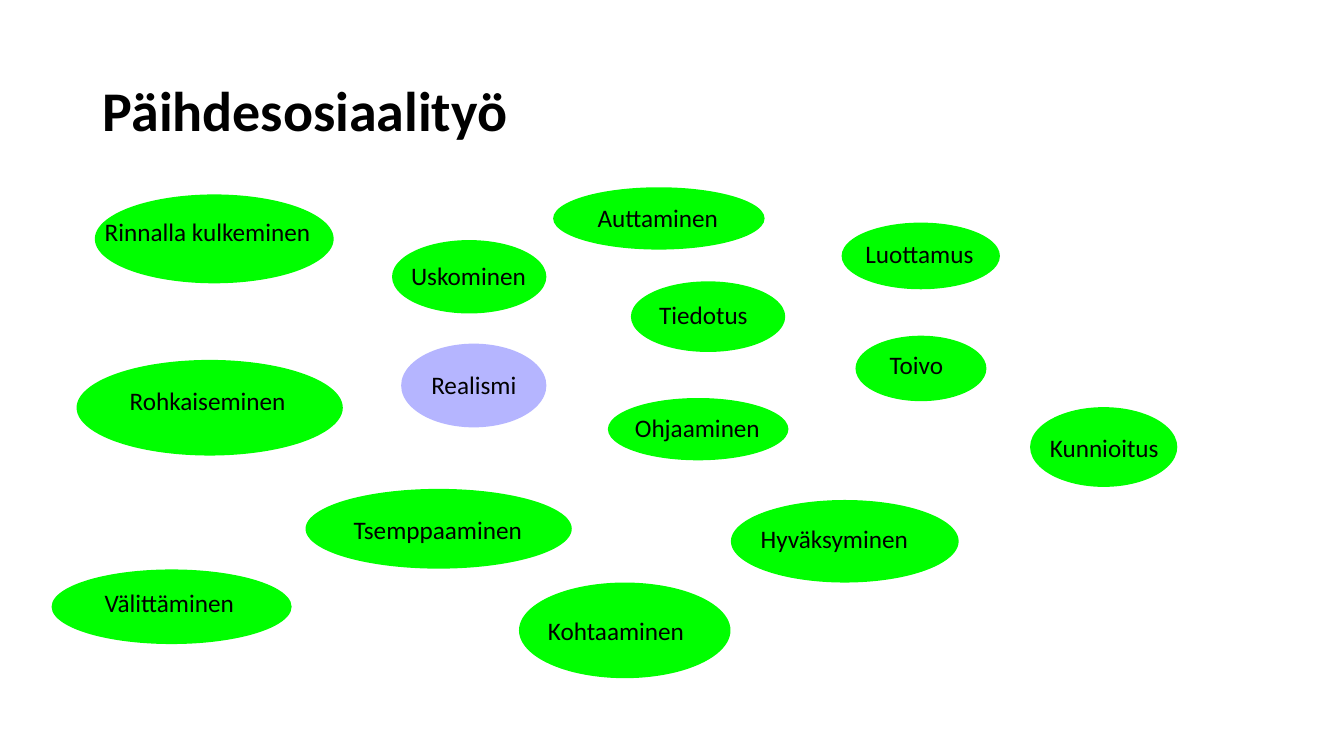
from dataclasses import dataclass

from pptx import Presentation
from pptx.dml.color import RGBColor
from pptx.enum.shapes import MSO_SHAPE
from pptx.enum.text import MSO_ANCHOR
from pptx.util import Cm, Pt


@dataclass(frozen=True)
class Theme:
    font: str = "Calibri"
    title_size: int = 40
    label_size: int = 18
    text: str = "000000"
    green: str = "00FF00"
    lavender: str = "B5B5FF"


THEME = Theme()
LABEL_HEIGHT = 1.02

# Word, ellipse (left, top, width, height), label (left, top, width), all in cm
CONCEPTS = [
    ("Rinnalla kulkeminen", (2.39, 4.9, 6.02, 2.24), (2.39, 5.33, 5.74)),
    ("Auttaminen", (13.94, 4.72, 5.33, 1.57), (14.81, 4.98, 3.61)),
    ("Luottamus", (21.21, 5.61, 3.99, 1.68), (21.56, 5.89, 3.63)),
    ("Uskominen", (9.88, 6.05, 3.89, 1.85), (10.11, 6.43, 3.43)),
    ("Tiedotus", (15.9, 7.09, 3.89, 1.78), (16.36, 7.42, 2.77)),
    ("Toivo", (21.56, 8.46, 3.3, 1.65), (22.17, 8.69, 2.06)),
    ("Realismi", (10.11, 8.66, 3.66, 2.11), (10.62, 9.19, 2.67)),
    ("Rohkaiseminen", (1.93, 9.07, 6.71, 2.41), (3.02, 9.58, 4.47)),
    ("Ohjaaminen", (15.32, 10.03, 4.55, 1.57), (15.75, 10.26, 3.71)),
    ("Kunnioitus", (25.96, 10.26, 3.71, 2.01), (26.21, 10.77, 3.86)),
    ("Tsemppaaminen", (7.7, 12.32, 6.71, 2.01), (8.66, 12.83, 4.8)),
    ("Hyväksyminen", (18.42, 12.6, 5.74, 2.08), (18.92, 13.06, 4.27)),
    ("Välittäminen", (1.3, 14.35, 6.05, 1.88), (2.39, 14.68, 3.81)),
    ("Kohtaaminen", (13.08, 14.68, 5.33, 2.41), (13.56, 15.37, 3.99)),
]


def add_text(slide, text, box, size, bold=False, anchor=MSO_ANCHOR.TOP):
    shape = slide.shapes.add_textbox(*map(Cm, box))
    frame = shape.text_frame
    frame.word_wrap = True
    frame.vertical_anchor = anchor
    paragraph = frame.paragraphs[0]
    paragraph.text = text
    font = paragraph.font
    font.name = THEME.font
    font.size = Pt(size)
    font.bold = bold
    font.color.rgb = RGBColor.from_string(THEME.text)
    return paragraph


def add_ellipse(slide, box, color):
    shape = slide.shapes.add_shape(MSO_SHAPE.OVAL, *map(Cm, box))
    shape.shadow.inherit = False
    shape.fill.solid()
    shape.fill.fore_color.rgb = RGBColor.from_string(color)
    shape.line.fill.background()


def main():
    presentation = Presentation()
    presentation.slide_width = Cm(33.87)
    presentation.slide_height = Cm(19.05)
    slide = presentation.slides.add_slide(presentation.slide_layouts[6])

    # Title
    title = add_text(slide, "Päihdesosiaalityö", (2.34, 1.02, 19.3, 3.68),
                     THEME.title_size, bold=True, anchor=MSO_ANCHOR.MIDDLE)
    title.line_spacing = 0.9

    # Concept bubbles; realism stands apart in its own colour
    for word, ellipse, label in CONCEPTS:
        color = THEME.lavender if word == "Realismi" else THEME.green
        add_ellipse(slide, ellipse, color)
        add_text(slide, word, (*label, LABEL_HEIGHT), THEME.label_size)

    presentation.save("out.pptx")


if __name__ == "__main__":
    main()
